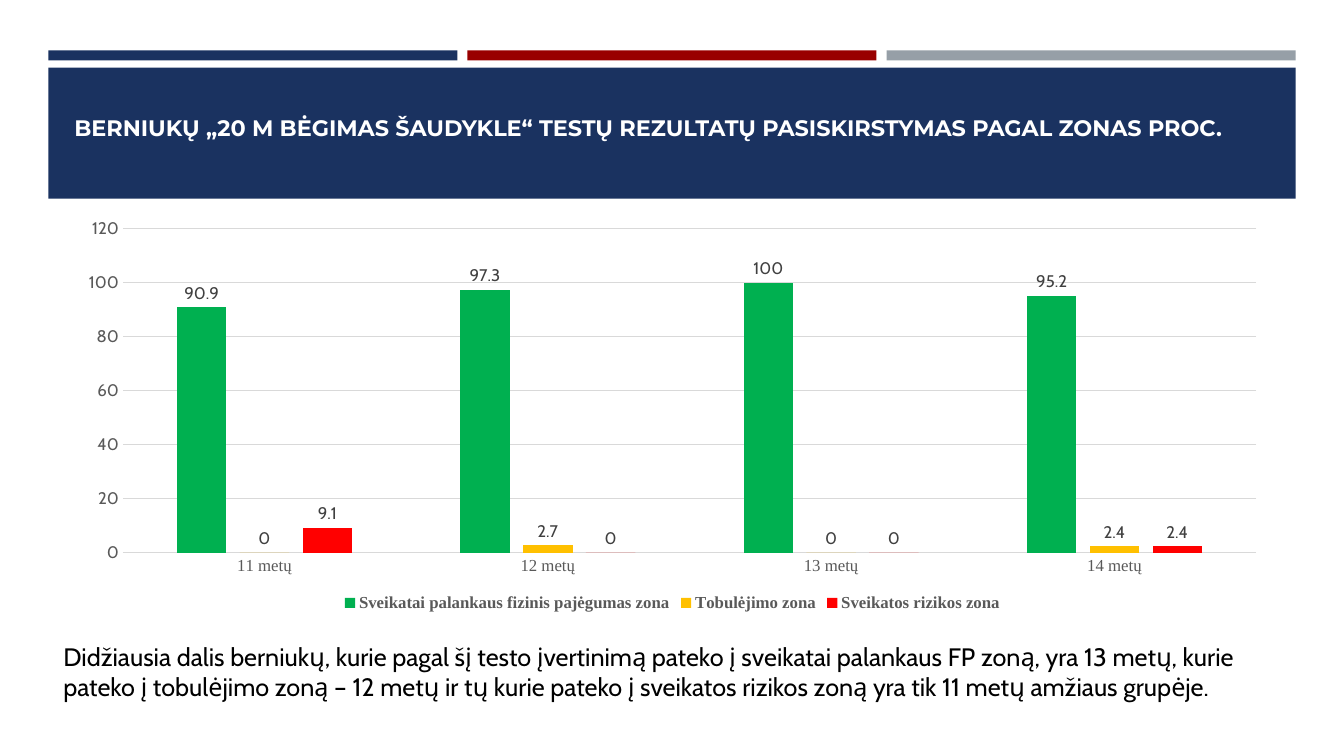
from lxml import etree
from pptx import Presentation
from pptx.chart.data import CategoryChartData
from pptx.dml.color import RGBColor
from pptx.enum.chart import XL_CHART_TYPE as CT, XL_LABEL_POSITION as LP
from pptx.enum.chart import XL_LEGEND_POSITION as LEG, XL_TICK_MARK as TICK
from pptx.enum.shapes import MSO_SHAPE as SHAPE
from pptx.enum.text import MSO_ANCHOR as ANCHOR
from pptx.util import Inches, Pt

NAVY, RED, GREY = "1A3260", "990000", "969FA7"
WHITE, BLACK, RULE, AXIS, LABEL = "FFFFFF", "000000", "D9D9D9", "595959", "404040"
SANS, HEAD, SERIF = "Cabin", "Montserrat", "Times New Roman"

TITLE = "BERNIUKŲ „20 M BĖGIMAS ŠAUDYKLE“ TESTŲ REZULTATŲ PASISKIRSTYMAS PAGAL ZONAS PROC."
SUMMARY = (
    "Didžiausia dalis berniukų, kurie pagal šį testo įvertinimą pateko į sveikatai "
    "palankaus FP zoną, yra 13 metų, kurie pateko į tobulėjimo zoną – 12 metų ir tų "
    "kurie pateko į sveikatos rizikos zoną yra tik 11 metų amžiaus grupėje."
)
AGES = ["11 metų", "12 metų", "13 metų", "14 metų"]
ZONES = [
    ("Sveikatai palankaus fizinis pajėgumas zona", "00B050", (90.9, 97.3, 100, 95.2)),
    ("Tobulėjimo zona", "FFC000", (0, 2.7, 0, 2.4)),
    ("Sveikatos rizikos zona", "FF0000", (9.1, 0, 0, 2.4)),
]


def rgb(color):
    """Turn a hex string into a colour."""
    return RGBColor.from_string(color)


def style(font, size, color, name, bold=False):
    """Set size, colour, typeface and weight of a font."""
    font.size, font.name, font.bold = Pt(size), name, bold
    font.color.rgb = rgb(color)


def add_block(slide, box, color):
    """Draw a plain filled rectangle."""
    sp = slide.shapes.add_shape(SHAPE.RECTANGLE, *map(Inches, box))
    sp.shadow.inherit = False
    sp.fill.solid()
    sp.fill.fore_color.rgb = rgb(color)
    sp.line.fill.background()


def add_text(slide, box, text, anchor, *font):
    """Place one wrapped paragraph and return its text frame."""
    tf = slide.shapes.add_textbox(*map(Inches, box)).text_frame
    tf.word_wrap, tf.vertical_anchor = True, anchor
    p = tf.paragraphs[0]
    p.text = text
    style(p.font, *font)
    return tf


def add_header(slide, box):
    """Draw three stripes above the title band."""
    left, top, width, height = box
    gap, stripe, band_top = 0.1, 0.1, 0.17
    column = (width - 2 * gap) / 3
    for i, color in enumerate((NAVY, RED, GREY)):
        add_block(slide, (left + i * (column + gap), top, column, stripe), color)
    add_block(slide, (left, top + band_top, width, height - band_top), NAVY)
    title_box = (left + 0.16, top + 0.11, width - 0.31, 1.11)
    tf = add_text(slide, title_box, TITLE, ANCHOR.BOTTOM, 16, WHITE, HEAD, True)
    tf.margin_bottom = Inches(0.32)


def add_zone_chart(slide, box):
    """Draw the clustered columns of zone shares by age."""
    data = CategoryChartData()
    data.categories = AGES
    for name, _, values in ZONES:
        data.add_series(name, values)
    chart = slide.shapes.add_chart(CT.COLUMN_CLUSTERED, *map(Inches, box), data).chart
    style(chart.font, 10, BLACK, SANS)
    chart.has_title = False
    chart.has_legend = True
    chart.legend.position = LEG.BOTTOM
    chart.legend.include_in_layout = False
    style(chart.legend.font, 12, AXIS, SERIF, True)

    for axis, name in ((chart.category_axis, SERIF), (chart.value_axis, SANS)):
        axis.major_tick_mark = axis.minor_tick_mark = TICK.NONE
        style(axis.tick_labels.font, 12, AXIS, name)
    chart.value_axis.format.line.fill.background()
    chart.value_axis.minimum_scale, chart.value_axis.maximum_scale = 0, 120
    chart.value_axis.major_unit = 20
    for rule in (chart.category_axis, chart.value_axis.major_gridlines):
        rule.format.line.color.rgb = rgb(RULE)
        rule.format.line.width = Pt(0.75)

    plot = chart.plots[0]
    plot.gap_width, plot.overlap, plot.vary_by_categories = 219, -27, False
    for series, (_, color, _) in zip(plot.series, ZONES):
        series.invert_if_negative = False
        series.format.fill.solid()
        series.format.fill.fore_color.rgb = rgb(color)
        labels = series.data_labels
        labels.show_value, labels.position = True, LP.OUTSIDE_END
        style(labels.font, 12, LABEL, SANS)


def add_summary(slide, box):
    """Place the concluding sentence below the chart."""
    tf = add_text(slide, box, SUMMARY, ANCHOR.MIDDLE, 18, BLACK, SANS)
    tf.paragraphs[0].space_after = Pt(6)


def main():
    """Build and save the slide."""
    prs = Presentation()
    prs.slide_width, prs.slide_height = Inches(13.33), Inches(7.5)
    slide = prs.slides.add_slide(prs.slide_layouts[6])
    add_header(slide, (0.48, 0.5, 12.37, 1.47))
    add_zone_chart(slide, (0.64, 2.09, 12.06, 4.02))
    add_summary(slide, (0.53, 5.93, 12.06, 1.47))
    prs.save("out.pptx")


if __name__ == "__main__":
    main()
